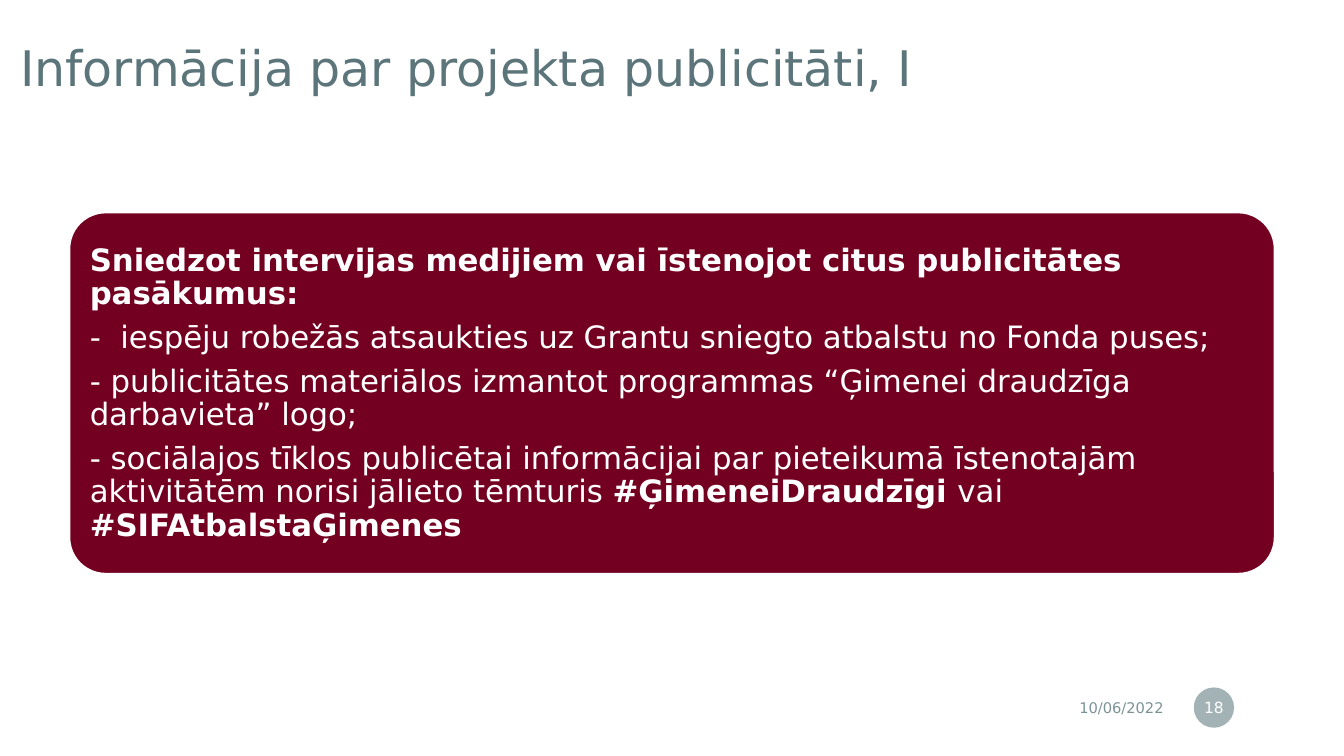
from dataclasses import dataclass

from lxml import etree
from pptx import Presentation
from pptx.dml.color import RGBColor
from pptx.enum.shapes import MSO_SHAPE
from pptx.enum.text import MSO_ANCHOR, MSO_AUTO_SIZE, PP_ALIGN
from pptx.oxml.ns import qn
from pptx.util import Inches, Pt

LEFT, CENTER, RIGHT = PP_ALIGN.LEFT, PP_ALIGN.CENTER, PP_ALIGN.RIGHT
TOP, MIDDLE = MSO_ANCHOR.TOP, MSO_ANCHOR.MIDDLE
NO_FIT = MSO_AUTO_SIZE.NONE
ELLIPSE, ROUNDED = MSO_SHAPE.OVAL, MSO_SHAPE.ROUNDED_RECTANGLE


@dataclass(frozen=True)
class Theme:
    font: str = "DejaVu Sans"
    heading: str = "5B757A"
    muted: str = "7C9396"
    panel: str = "740021"
    white: str = "FFFFFF"
    title_size: float = 35
    body_size: float = 22
    date_size: float = 10.5
    number_size: float = 11


class SlideBuilder:
    def __init__(self, slide, theme):
        self.s = slide
        self.theme = theme

    def place(self, sp, box):
        for name, value in zip(("left", "top", "width", "height"), box):
            setattr(sp, name, Inches(value))

    def frame(self, sp, insets, anchor=MIDDLE):
        tf = sp.text_frame
        left, top, right, bottom = map(Inches, insets)
        settings = dict(word_wrap=True, auto_size=NO_FIT, vertical_anchor=anchor,
                        margin_left=left, margin_top=top,
                        margin_right=right, margin_bottom=bottom)
        for name, value in settings.items():
            setattr(tf, name, value)
        return tf

    def add_runs(self, p, runs, size, color, **layout):
        for name, value in layout.items():
            setattr(p, name, value)
        for text, bold in runs:
            r = p.add_run()
            r.text = text
            settings = dict(name=self.theme.font, size=Pt(size), bold=bold)
            for name, value in settings.items():
                setattr(r.font, name, value)
            r.font.color.rgb = RGBColor.from_string(color)

    def title(self, text, box):
        sp = self.s.shapes.title
        self.place(sp, box)
        tf = self.frame(sp, (0.2, 0.04, 0.2, 0.2), TOP)
        self.add_runs(tf.paragraphs[0], [(text, False)], self.theme.title_size,
                      self.theme.heading, alignment=LEFT, line_spacing=0.9)

    def body(self, paragraphs, box):
        sp = self.s.placeholders[1]
        self.place(sp, box)
        # Bring the text in front of the panel
        self.s.shapes._spTree.append(sp._element)
        tf = self.frame(sp, (0.09,) * 4)
        size = self.theme.body_size
        for i, runs in enumerate(paragraphs):
            p = tf.add_paragraph() if i else tf.paragraphs[0]
            pPr = p._p.get_or_add_pPr()
            pPr.set("marL", "0")
            pPr.set("indent", "0")
            etree.SubElement(pPr, qn("a:buNone"))
            self.add_runs(p, runs, size, self.theme.white, alignment=LEFT,
                          line_spacing=0.9, space_before=Pt(0),
                          space_after=Pt(0.35 * size))

    def shape(self, kind, box, color, line=None, alpha=None):
        sp = self.s.shapes.add_shape(kind, *map(Inches, box))
        sp.shadow.inherit = False
        sp.fill.solid()
        sp.fill.fore_color.rgb = RGBColor.from_string(color)
        if line:
            sp.line.color.rgb = RGBColor.from_string(line)
            sp.line.width = Pt(1)
        else:
            sp.line.fill.background()
        if alpha:
            clr = sp._element.spPr.find(qn("a:solidFill")).find(qn("a:srgbClr"))
            etree.SubElement(clr, qn("a:alpha")).set("val", str(alpha * 1000))
        return sp

    def date(self, text, box):
        sp = self.s.shapes.add_textbox(*map(Inches, box))
        tf = self.frame(sp, (0.1, 0.05, 0.1, 0.05))
        self.add_runs(tf.paragraphs[0], [(text, False)], self.theme.date_size,
                      self.theme.muted, alignment=RIGHT)

    def page_number(self, text, box):
        sp = self.shape(ELLIPSE, box, self.theme.muted, alpha=70)
        tf = self.frame(sp, (0.02, 0.05, 0.02, 0.05))
        self.add_runs(tf.paragraphs[0], [(text, False)], self.theme.number_size,
                      self.theme.white, alignment=CENTER)


PUBLICITY_RULES = [
    [("Sniedzot intervijas medijiem vai īstenojot citus publicitātes pasākumus:", True)],
    [("-  iespēju robežās atsaukties uz Grantu sniegto atbalstu no Fonda puses;", False)],
    [("- publicitātes materiālos izmantot programmas “Ģimenei draudzīga darbavieta” logo;",
      False)],
    [("- sociālajos tīklos publicētai informācijai par pieteikumā īstenotajām "
      "aktivitātēm norisi jālieto tēmturis ", False),
     ("#ĢimeneiDraudzīgi ", True), ("vai ", False), ("#SIFAtbalstaĢimenes", True)],
]


def main():
    prs = Presentation()
    prs.slide_width, prs.slide_height = Inches(13.33), Inches(7.5)
    theme = Theme()
    slide = SlideBuilder(prs.slides.add_slide(prs.slide_layouts[1]), theme)

    # Heading
    slide.title("Informācija par projekta publicitāti, I", (0, 0.4, 11.41, 1.19))

    # Footer
    slide.date("10/06/2022", (8.63, 6.84, 3.01, 0.35))
    slide.page_number("18", (11.84, 6.82, 0.4, 0.4))

    # Panel with the publicity rules
    panel = slide.shape(ROUNDED, (0.69, 2.11, 11.95, 3.58), theme.panel, theme.white)
    panel.adjustments[0] = 0.1
    slide.body(PUBLICITY_RULES, (0.8, 2.22, 11.74, 3.37))

    prs.save("out.pptx")


if __name__ == "__main__":
    main()
